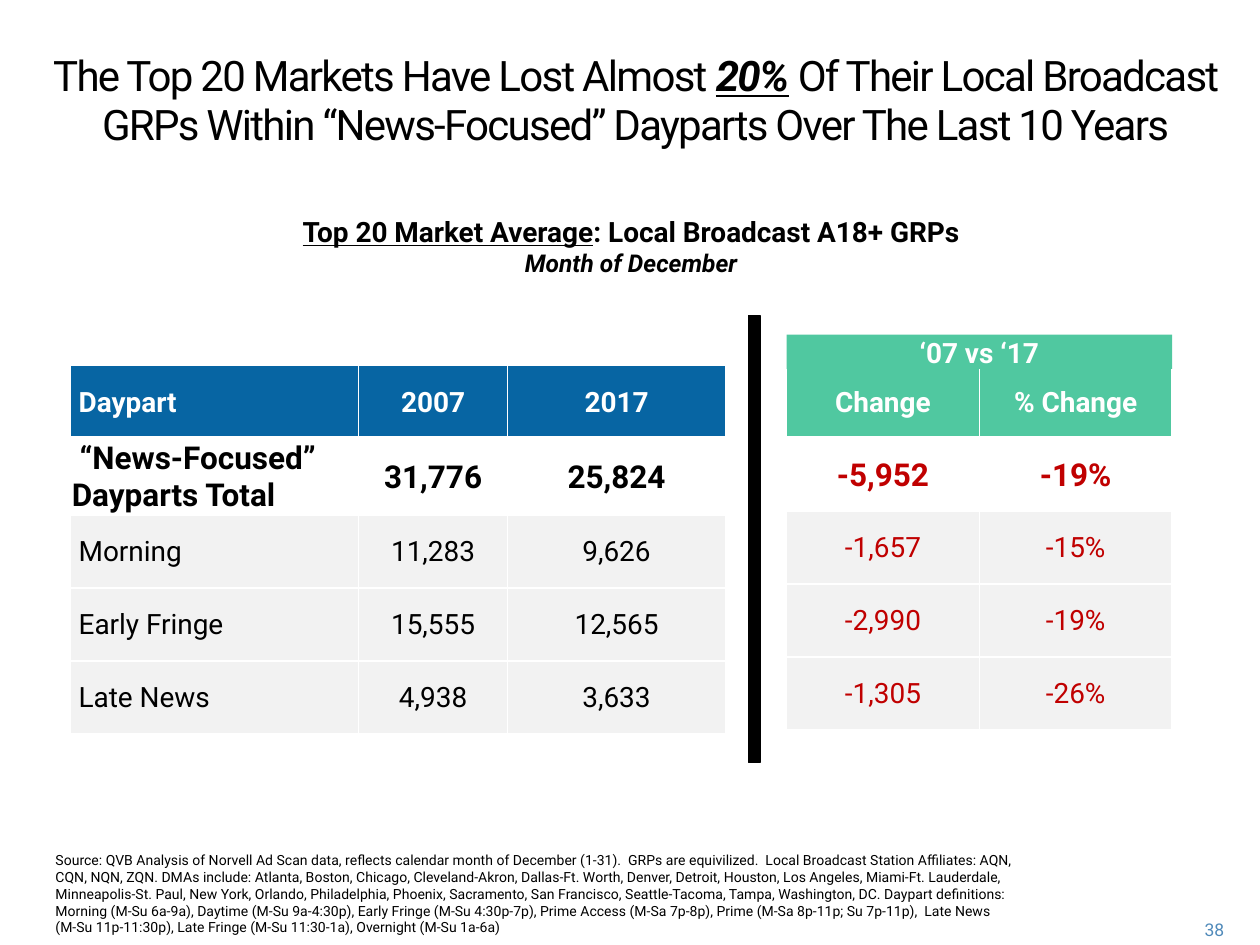
import dataclasses

import pptx
import pptx.dml.color
import pptx.enum.shapes
import pptx.enum.text
import pptx.oxml
import pptx.oxml.ns
import pptx.util

Pt = pptx.util.Pt
Align = pptx.enum.text.PP_ALIGN
Anchor = pptx.enum.text.MSO_ANCHOR


@dataclasses.dataclass(frozen=True)
class Theme:
    font: str = "Roboto"
    black: str = "000000"
    white: str = "FFFFFF"
    blue: str = "0765A3"
    green: str = "50C8A0"
    red: str = "C00000"
    grey: str = "F2F2F2"
    number: str = "508ABA"
    title_size: int = 24
    total_size: int = 18
    body_size: int = 16
    period_size: int = 14
    number_size: int = 10
    source_size: int = 8


THEME = Theme()

SOURCE = (
    "Source: QVB Analysis of Norvell Ad Scan data, reflects calendar month of December (1-31).  "
    "GRPs are equivilized.  Local Broadcast Station Affiliates: AQN, CQN, NQN, ZQN. "
    "DMAs include: Atlanta, Boston, Chicago, Cleveland-Akron, Dallas-Ft. Worth, Denver, Detroit, "
    "Houston, Los Angeles, Miami-Ft. Lauderdale, Minneapolis-St. Paul, New York, Orlando, "
    "Philadelphia, Phoenix, Sacramento, San Francisco, Seattle-Tacoma, Tampa, Washington, DC. "
    "Daypart definitions: Morning (M-Su 6a-9a), Daytime (M-Su 9a-4:30p), "
    "Early Fringe (M-Su 4:30p-7p), Prime Access (M-Sa 7p-8p), Prime (M-Sa 8p-11p; Su 7p-11p),  "
    "Late News (M-Su 11p-11:30p), Late Fringe (M-Su 11:30-1a), Overnight (M-Su 1a-6a)"
)

GRP_ROWS = [
    (" Daypart", "2007", "2017"),
    (" “News-Focused” Dayparts Total", "31,776", "25,824"),
    (" Morning", "11,283", "9,626"),
    (" Early Fringe", "15,555", "12,565"),
    (" Late News", "4,938", "3,633"),
]
CHANGE_ROWS = [
    ("Change", "% Change"),
    ("-5,952", "-19%"),
    ("-1,657", "-15%"),
    ("-2,990", "-19%"),
    ("-1,305", "-26%"),
]


def color(value):
    return pptx.dml.color.RGBColor.from_string(value)


def write(para, text, size=THEME.body_size, ink=THEME.black, bold=False,
          italic=False, underline=False, spacing=0):
    span = para.add_run()
    span.text = text
    font = span.font
    font.name, font.size = THEME.font, Pt(size)
    font.bold, font.italic, font.underline = bold, italic, underline
    font.color.rgb = color(ink)
    if spacing:
        font._element.set("spc", str(spacing * 100))


def add_textbox(page, box, align=Align.LEFT, anchor=Anchor.TOP):
    frame = page.shapes.add_textbox(*map(Pt, box)).text_frame
    frame.word_wrap = True
    frame.vertical_anchor = anchor
    frame.paragraphs[0].alignment = align
    return frame


def add_block(page, box, fill):
    block = page.shapes.add_shape(pptx.enum.shapes.MSO_SHAPE.RECTANGLE, *map(Pt, box))
    block.shadow.inherit = False
    block.fill.solid()
    block.fill.fore_color.rgb = color(fill)
    block.line.fill.background()
    return block


def add_title(page, box):
    para = add_textbox(page, box, Align.CENTER).paragraphs[0]
    para.line_spacing = Pt(28)
    style = dict(size=THEME.title_size, spacing=-1)
    write(para, "The Top 20 Markets Have Lost Almost ", **style)
    write(para, "20%", bold=True, italic=True, underline=True, **style)
    write(para, " Of Their Local Broadcast GRPs Within “News-Focused” Dayparts "
                "Over The Last 10 Years", **style)


def add_subtitle(page, box):
    frame = add_textbox(page, box, Align.CENTER, Anchor.MIDDLE)
    heading = frame.paragraphs[0]
    write(heading, "Top 20 Market Average", bold=True, underline=True)
    write(heading, ": Local Broadcast A18+ GRPs", bold=True)
    period = frame.add_paragraph()
    period.alignment = Align.CENTER
    write(period, "Month of December", size=THEME.period_size, bold=True, italic=True)


def set_borders(cell, bottom):
    properties = cell._tc.get_or_add_tcPr()
    widths = {"lnL": 1, "lnR": 1, "lnT": 1, "lnB": bottom}
    for position, (side, width) in enumerate(widths.items()):
        border = pptx.oxml.parse_xml(
            f'<a:{side} {pptx.oxml.ns.nsdecls("a")} w="{Pt(width)}"><a:solidFill>'
            f'<a:srgbClr val="{THEME.white}"/></a:solidFill></a:{side}>')
        properties.insert(position, border)


def add_grid(page, box, rows, widths, header_fill, ink, label_columns=0):
    table = page.shapes.add_table(len(rows), len(widths), *map(Pt, box)).table
    for column, width in zip(table.columns, widths):
        column.width = Pt(width)
    looks = [
        (header_fill, dict(ink=THEME.white, bold=True)),
        (THEME.white, dict(ink=ink, bold=True, size=THEME.total_size)),
    ] + [(THEME.grey, dict(ink=ink))] * (len(rows) - 2)
    for r, (values, (fill, style)) in enumerate(zip(rows, looks)):
        table.rows[r].height = Pt(box[3] / len(rows))
        for c, text in enumerate(values):
            cell = table.cell(r, c)
            cell.fill.solid()
            cell.fill.fore_color.rgb = color(fill)
            cell.margin_left = cell.margin_right = cell.margin_top = Pt(0.72)
            cell.margin_bottom = 0
            cell.vertical_anchor = Anchor.MIDDLE
            set_borders(cell, bottom=3 if r == 0 else 1)
            para = cell.text_frame.paragraphs[0]
            para.alignment = Align.LEFT if c < label_columns else Align.CENTER
            write(para, text, **style)


def add_change_panel(page, box):
    left, top, width, height = box
    banner_height, table_top = 19.5, 17.7
    add_grid(page, (left, top + table_top, width, height - table_top), CHANGE_ROWS,
             [width / 2] * 2, THEME.green, THEME.red)
    banner = add_block(page, (left, top, width, banner_height), THEME.green)
    banner.text_frame.vertical_anchor = Anchor.MIDDLE
    para = banner.text_frame.paragraphs[0]
    para.alignment = Align.CENTER
    write(para, "‘07 vs ‘17", ink=THEME.white, bold=True)


def add_divider(page, box):
    divider = add_block(page, box, THEME.black)
    divider.line.color.rgb = color(THEME.black)
    divider.line.width = Pt(0.75)


def add_footer(page, box):
    left, top, width, height = box
    source = add_textbox(page, (left, top, 563, height)).paragraphs[0]
    write(source, SOURCE, size=THEME.source_size)
    number_width = 44
    number_box = (left + width - number_width, top + 38.3, number_width, 18)
    number = add_textbox(page, number_box, Align.RIGHT).paragraphs[0]
    write(number, "38", size=THEME.number_size, ink=THEME.number)


def main():
    deck = pptx.Presentation()
    deck.slide_width, deck.slide_height = Pt(720), Pt(540)
    page = deck.slides.add_slide(deck.slide_layouts[6])
    add_title(page, (16, 25.6, 694, 64))
    add_subtitle(page, (62.7, 121, 596, 39.5))
    add_grid(page, (40.3, 209, 374.4, 208), GRP_ROWS, (164.7, 85, 124.7),
             THEME.blue, THEME.black, label_columns=1)
    add_divider(page, (427.8, 180.2, 6.5, 255.6))
    add_change_panel(page, (449.5, 191.3, 220.3, 225.7))
    add_footer(page, (24.6, 483.2, 682, 50))
    deck.save("out.pptx")


if __name__ == "__main__":
    main()
